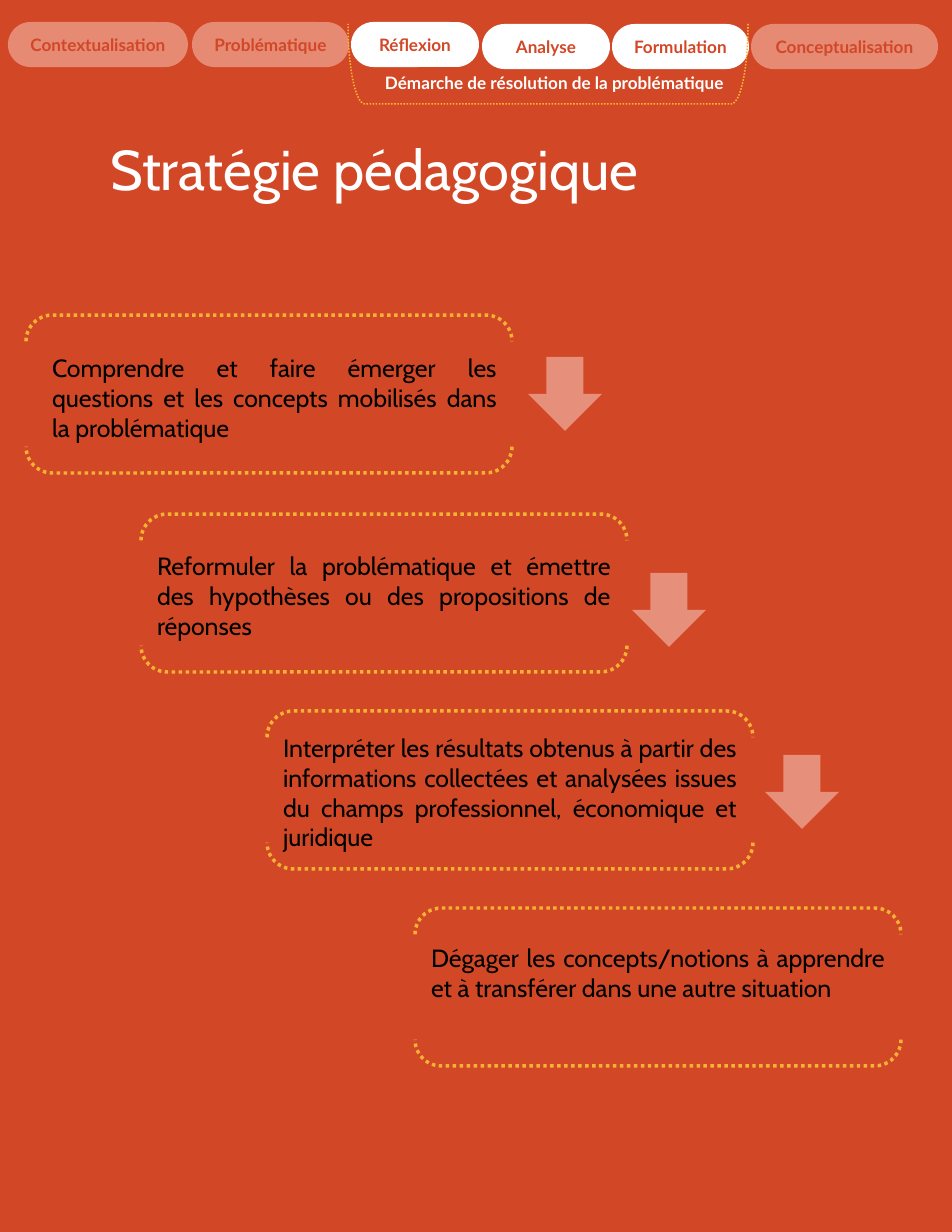
from pptx import Presentation
from pptx import util as u
from pptx.dml.color import RGBColor
from pptx.enum import dml, shapes, text

PX_PER_INCH = 112
ORANGE = RGBColor(0xD2, 0x47, 0x26)
SALMON = RGBColor(0xE6, 0x8A, 0x74)
ARROW_SALMON = RGBColor(0xE6, 0x8F, 0x7A)
YELLOW = RGBColor(0xF9, 0xB2, 0x33)
WHITE = RGBColor(0xFF, 0xFF, 0xFF)
BLACK = RGBColor(0, 0, 0)

PILLS = [
    ("Contextualisation", 8, 22, 180, SALMON),
    ("Problématique", 192, 22, 157, SALMON),
    ("Réflexion", 351, 22, 128, WHITE),
    ("Analyse", 482, 24, 128, WHITE),
    ("Formulation", 612, 24, 137, WHITE),
    ("Conceptualisation", 751, 24, 187, SALMON),
]
STEPS = [
    ("Comprendre et faire émerger les questions et les concepts mobilisés dans la problématique",
     (26, 315), (15, 32, 467, 102), (502, 42)),
    ("Reformuler la problématique et émettre des hypothèses ou des propositions de réponses",
     (141, 514), (5, 31, 476, 102), (491, 59)),
    ("Interpréter les résultats obtenus à partir des informations collectées et analysées issues "
     "du champs professionnel, économique et juridique",
     (267, 711), (5, 16, 476, 132), (498, 44)),
    ("Dégager les concepts/notions à apprendre et à transférer dans une autre situation",
     (415, 908), (5, 29, 476, 102), None),
]


def px(value):
    return u.Emu(round(value * 914400 / PX_PER_INCH))


def write(frame, words, size, font, color, align, bold=False):
    frame.text = words
    frame.word_wrap = True
    paragraph = frame.paragraphs[0]
    paragraph.alignment = align
    run_font = paragraph.runs[0].font
    run_font.size = u.Pt(size)
    run_font.name = font
    run_font.bold = bold
    run_font.color.rgb = color


def add_text(slide, box, *style):
    label = slide.shapes.add_textbox(*map(px, box))
    write(label.text_frame, *style)


def add_filled(slide, preset, box, color):
    part = slide.shapes.add_shape(preset, *map(px, box))
    part.shadow.inherit = False
    part.fill.solid()
    part.fill.fore_color.rgb = color
    part.line.fill.background()
    return part


def add_turned_bracket(slide, preset, box, weight):
    x, y, w, h = box
    bracket = slide.shapes.add_shape(
        preset, px(x + (w - h) / 2), px(y + (h - w) / 2), px(h), px(w))
    bracket.rotation = 90
    bracket.shadow.inherit = False
    bracket.fill.background()
    bracket.line.color.rgb = YELLOW
    bracket.line.width = u.Pt(weight)
    bracket.line.dash_style = dml.MSO_LINE.ROUND_DOT
    return bracket


def add_title(slide, box):
    title = slide.shapes.title
    title.left, title.top, title.width, title.height = map(px, box)
    frame = title.text_frame
    write(frame, "Stratégie pédagogique", 36, "Cabin", WHITE, text.PP_ALIGN.LEFT)
    frame.vertical_anchor = text.MSO_ANCHOR.TOP
    frame.auto_size = text.MSO_AUTO_SIZE.NONE


def add_step(slide, corner, words, text_box, arrow_offset):
    x, y = corner
    dx, dy, w, h = text_box
    add_text(slide, (x + dx, y + dy, w, h), words, 16, "Cabin", BLACK, text.PP_ALIGN.JUSTIFY)
    add_turned_bracket(slide, shapes.MSO_SHAPE.DOUBLE_BRACKET, (x, y, 486, 158), 2.25)
    if arrow_offset:
        dx, dy = arrow_offset
        add_filled(slide, shapes.MSO_SHAPE.DOWN_ARROW, (x + dx, y + dy, 74, 74), ARROW_SALMON)


def add_navigation(slide, left, top):
    for words, x, y, w, color in PILLS:
        pill = add_filled(slide, shapes.MSO_SHAPE.ROUNDED_RECTANGLE,
                          (left + x, top + y, w, 45), color)
        pill.adjustments[0] = 0.5
        write(pill.text_frame, words, 11, "Lato", ORANGE, text.PP_ALIGN.CENTER, True)
        pill.text_frame.vertical_anchor = text.MSO_ANCHOR.MIDDLE
    add_text(slide, (left + 345, top + 67, 419, 32),
             "Démarche de résolution de la problématique", 11, "Lato", WHITE,
             text.PP_ALIGN.CENTER, True)
    bracket = add_turned_bracket(slide, shapes.MSO_SHAPE.RIGHT_BRACKET,
                                 (left + 348, top + 24, 400, 80), 1)
    bracket.adjustments[0] = 0.21


def main():
    deck = Presentation()
    deck.slide_width, deck.slide_height = u.Inches(8.5), u.Inches(11)
    slide = deck.slides.add_slide(deck.slide_layouts[5])
    slide.background.fill.solid()
    slide.background.fill.fore_color.rgb = ORANGE
    for words, corner, text_box, arrow_offset in STEPS:
        add_step(slide, corner, words, text_box, arrow_offset)
    add_title(slide, (99, 129, 737, 80))
    add_navigation(slide, 0, 0)
    deck.save("out.pptx")


if __name__ == "__main__":
    main()
